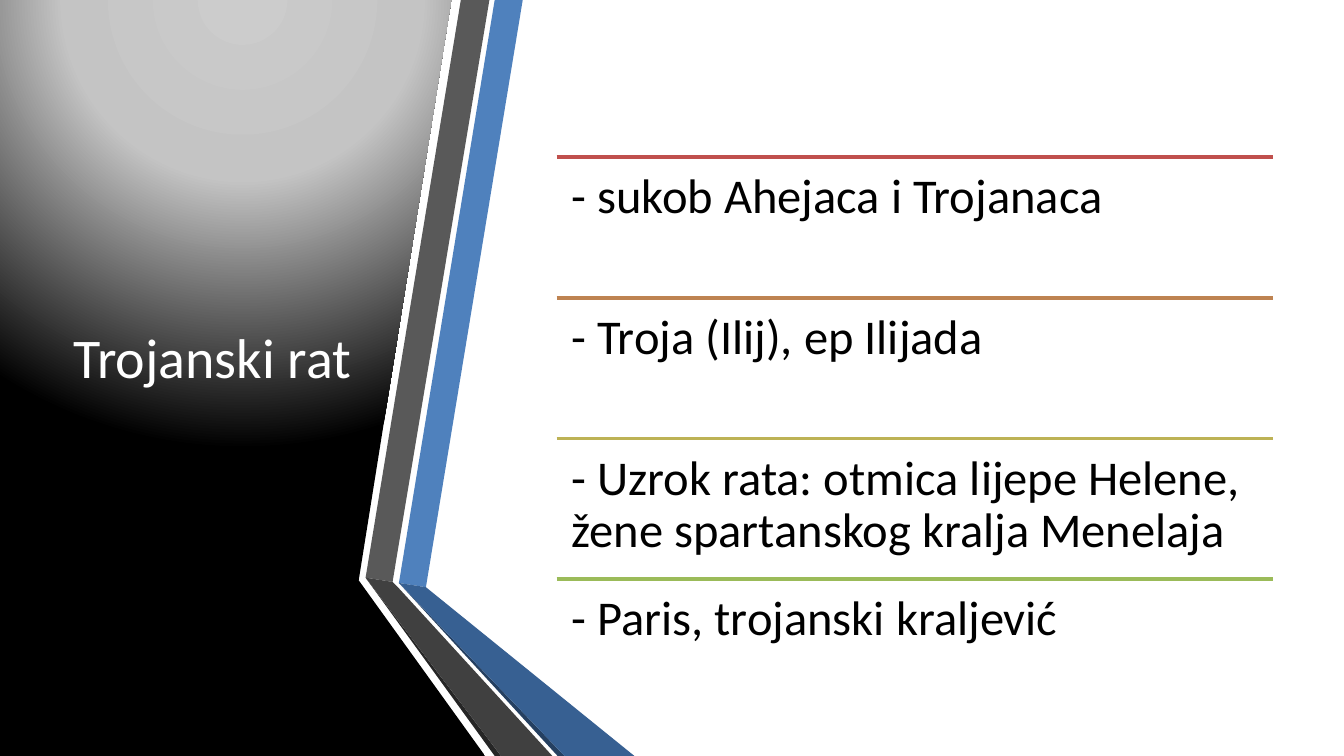
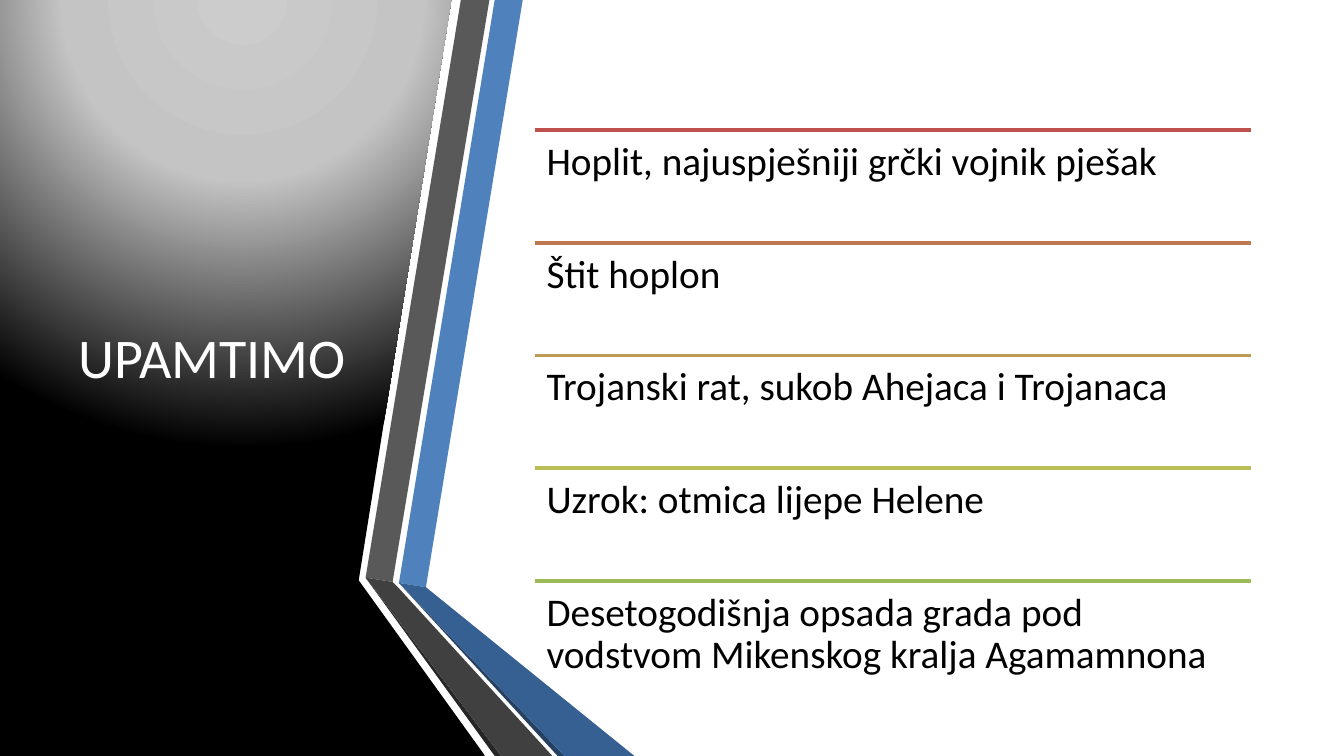
"""Builds two history slides with a folded ribbon, a title and a ruled list."""
from lxml import etree
from pptx import Presentation
from pptx.dml.color import RGBColor
from pptx.enum.dml import MSO_FILL
from pptx.enum.shapes import MSO_CONNECTOR
from pptx.enum.text import MSO_ANCHOR, PP_ALIGN
from pptx.oxml.ns import qn
from pptx.util import Cm, Pt

STRAIGHT = MSO_CONNECTOR.STRAIGHT
GRADIENT = MSO_FILL.GRADIENT
TOP, MIDDLE = MSO_ANCHOR.TOP, MSO_ANCHOR.MIDDLE
LEFT, CENTER = PP_ALIGN.LEFT, PP_ALIGN.CENTER

FONT = "Calibri"
HEIGHT = 14.29
COLORS = {
    "white": "FFFFFF", "black": "000000",
    "glow": "CCCCCC", "glow_edge": "C4C4C4",
    "blue": "4F81BD", "blue_fold": "376092", "blue_shade": "254061",
    "gray": "595959", "gray_fold": "404040", "gray_shade": "262626",
}
PANEL = [(0, 0), (8.53, 0), (6.78, 10.97), (9.17, HEIGHT), (0, HEIGHT)]
PANEL_STOPS = [(0, "glow"), (40, "glow_edge"), (100, "black")]
PANEL_FOCUS = {"l": 50, "t": -80, "r": 50, "b": 180}
RIBBONS = [
    ("blue", [(7.54, 11.02), (8.05, 11.1), (9.88, 0), (9.35, 0)]),
    ("gray", [(9.25, 0), (8.71, 0), (6.91, 10.92), (7.42, 11)]),
    ("gray_shade", [(6.91, 10.92), (9.35, HEIGHT), (9.47, HEIGHT)]),
    ("blue_shade", [(7.54, 11.02), (10.54, HEIGHT), (10.67, HEIGHT)]),
    ("blue_fold", [(7.54, 11.02), (10.67, HEIGHT), (11.99, HEIGHT), (8.05, 11.1)]),
    ("gray_fold", [(10.44, HEIGHT), (7.52, 11.1), (7.42, 11), (6.91, 10.92), (9.47, HEIGHT)]),
]
TITLE_FORMAT = {
    "frame": {"vertical_anchor": MIDDLE},
    "paragraph": {"alignment": CENTER},
    "font": {"size": Pt(30)},
    "color": "white",
}
SLIDES = [
    {
        "title": "Trojanski rat", "left": 10.52, "top": 2.97, "pitch": 2.66,
        "size": 26, "inset": 0.28,
        "rows": [
            ("C0504D", "- sukob Ahejaca i Trojanaca"),
            ("BE8351", "- Troja (Ilij), ep Ilijada"),
            ("BDB255", "- Uzrok rata: otmica lijepe Helene, žene spartanskog kralja Menelaja"),
            ("9BBB59", "- Paris, trojanski kraljević"),
        ],
    },
    {
        "title": "UPAMTIMO", "left": 10.11, "top": 2.46, "pitch": 2.13,
        "size": 21, "inset": 0.22,
        "rows": [
            ("C0504D", "Hoplit, najuspješniji grčki vojnik pješak"),
            ("BF7750", "Štit hoplon"),
            ("BD9B53", "Trojanski rat, sukob Ahejaca i Trojanaca"),
            ("BCBC56", "Uzrok: otmica lijepe Helene"),
            ("9BBB59", "Desetogodišnja opsada grada pod vodstvom Mikenskog kralja Agamamnona"),
        ],
    },
]
ROW_WIDTH = 13.54


def add_outline(shapes, points, color):
    corners = [(Cm(x), Cm(y)) for x, y in points]
    builder = shapes.build_freeform(*corners[0])
    builder.add_line_segments(corners[1:], close=True)
    shape = builder.convert_to_shape()
    shape.shadow.inherit = False
    shape.line.fill.background()
    shape.fill.solid()
    shape.fill.fore_color.rgb = RGBColor.from_string(COLORS[color])
    return shape


def add_text(shapes, text, box, formats):
    shape = shapes.add_textbox(*[Cm(value) for value in box])
    frame = shape.text_frame
    frame.word_wrap = True
    paragraph = frame.paragraphs[0]
    run = paragraph.add_run()
    run.text = text
    run.font.name = FONT
    run.font.color.rgb = RGBColor.from_string(COLORS[formats["color"]])
    targets = {"frame": frame, "paragraph": paragraph, "font": run.font}
    for key, target in targets.items():
        for name, value in formats[key].items():
            setattr(target, name, value)


presentation = Presentation()
presentation.slide_width = Cm(25.4)
presentation.slide_height = Cm(HEIGHT)

for content in SLIDES:
    slide = presentation.slides.add_slide(presentation.slide_layouts[6])
    slide.background.fill.solid()
    slide.background.fill.fore_color.rgb = RGBColor.from_string(COLORS["white"])

    panel = add_outline(slide.shapes, PANEL, "black")
    panel.fill.gradient()
    if panel.fill.type == GRADIENT:
        gradient = panel.fill._fill._gradFill
        for child in list(gradient):
            gradient.remove(child)
        stops = etree.SubElement(gradient, qn("a:gsLst"))
        for position, color in PANEL_STOPS:
            stop = etree.SubElement(stops, qn("a:gs"), pos=str(position * 1000))
            etree.SubElement(stop, qn("a:srgbClr"), val=COLORS[color])
        radial = etree.SubElement(gradient, qn("a:path"), {"path": "circle"})
        focus = {side: str(value * 1000) for side, value in PANEL_FOCUS.items()}
        etree.SubElement(radial, qn("a:fillToRect"), focus)

    ribbon = slide.shapes.add_group_shape()
    for color, points in RIBBONS:
        add_outline(ribbon.shapes, points, color)

    add_text(slide.shapes, content["title"], (1.12, 1.42, 5.79, 10.64), TITLE_FORMAT)

    sides = ("left", "top", "right", "bottom")
    row_frame = {f"margin_{side}": Cm(content["inset"]) for side in sides}
    row_format = {
        "frame": {"vertical_anchor": TOP, **row_frame},
        "paragraph": {"alignment": LEFT, "line_spacing": 0.9},
        "font": {"size": Pt(content["size"])},
        "color": "black",
    }
    rows = slide.shapes.add_group_shape()
    left, pitch = content["left"], content["pitch"]
    for index, (color, text) in enumerate(content["rows"]):
        top = content["top"] + index * pitch
        rule = rows.shapes.add_connector(
            STRAIGHT, Cm(left), Cm(top), Cm(left + ROW_WIDTH), Cm(top))
        rule.line.color.rgb = RGBColor.from_string(color)
        rule.line.width = Pt(2)
        etree.SubElement(rule._element.spPr, qn("a:effectLst"))
        add_text(rows.shapes, text, (left, top, ROW_WIDTH, pitch), row_format)

presentation.save("out.pptx")
